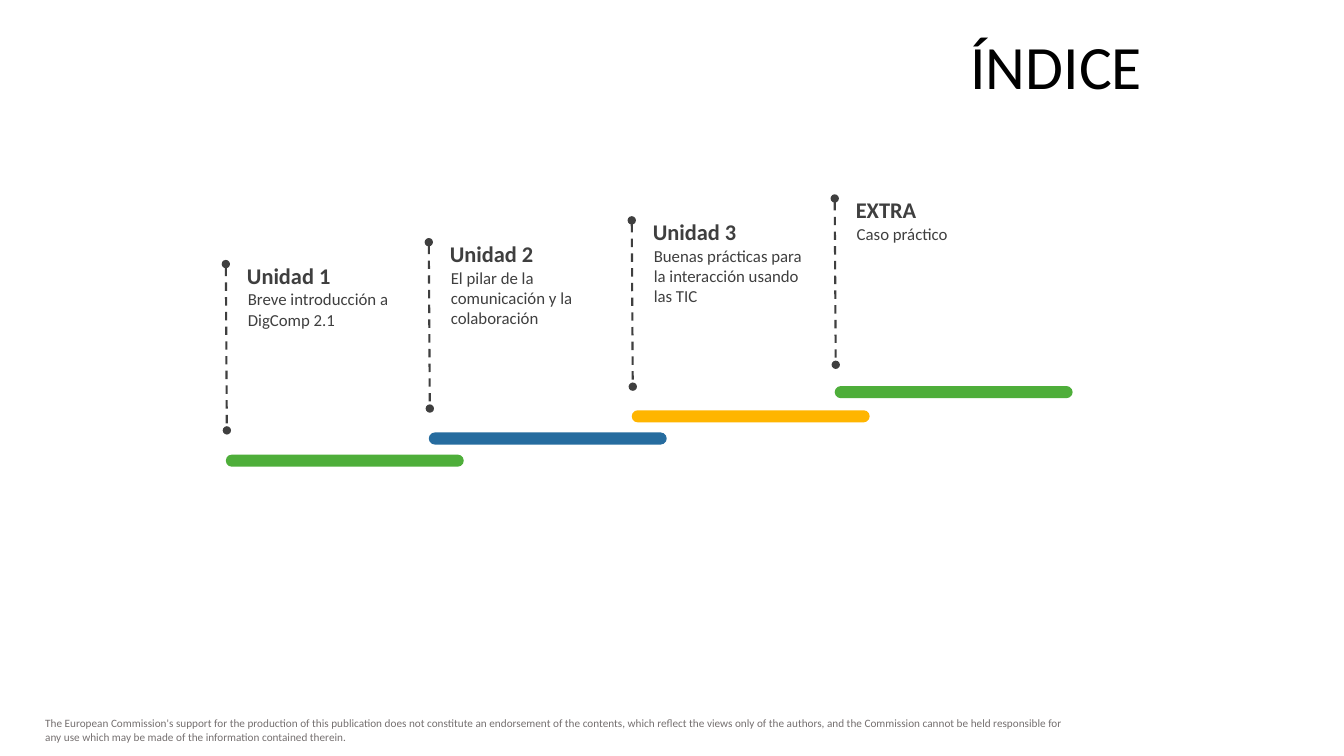
from pptx import Presentation
from pptx.dml.color import RGBColor
from pptx.enum.dml import MSO_LINE
from pptx.enum.shapes import MSO_CONNECTOR, MSO_SHAPE
from pptx.enum.text import MSO_ANCHOR, MSO_AUTO_SIZE, PP_ALIGN
from pptx.oxml.ns import qn
from pptx.util import Inches, Pt
from lxml import etree

ROUNDED = MSO_SHAPE.ROUNDED_RECTANGLE
STRAIGHT = MSO_CONNECTOR.STRAIGHT
DASH = MSO_LINE.DASH
MIDDLE = MSO_ANCHOR.MIDDLE
FIT_SHAPE = MSO_AUTO_SIZE.SHAPE_TO_FIT_TEXT
NO_FIT = MSO_AUTO_SIZE.NONE
RIGHT = PP_ALIGN.RIGHT

GREEN, BLUE, YELLOW = "4EAE3A", "266C9F", "FFB500"
DARK, GRAY, BLACK = "3F3F3F", "757070", "000000"

FIRST_LEFT, FIRST_TOP = 2.24, 2.62
STEP_RIGHT, STEP_UP = 2.013, 0.217

# heading, description, description height, bar top, bar colour
UNITS = [
    ("Unidad 1", "Breve introducción a DigComp 2.1", 0.5, 4.51, GREEN),
    ("Unidad 2", "El pilar de la comunicación y la colaboración", 0.71, 4.29, BLUE),
    ("Unidad 3", "Buenas prácticas para la interacción usando las TIC", 0.71, 4.07, YELLOW),
    ("EXTRA", "Caso práctico", 0.3, 3.83, GREEN),
]


def set_font(para, size, color, bold=False):
    para.font.name = "Calibri"
    para.font.size = Pt(size)
    para.font.bold = bold
    para.font.color.rgb = RGBColor.from_string(color)


def add_text(page, text, left, top, width, height, size, color, bold=False, inset=0.1):
    box = page.shapes.add_textbox(Inches(left), Inches(top), Inches(width), Inches(height))
    frame = box.text_frame
    frame.word_wrap = True
    frame.auto_size = FIT_SHAPE
    frame.margin_left = frame.margin_right = Inches(inset)
    frame.text = text
    set_font(frame.paragraphs[0], size, color, bold)


deck = Presentation()
deck.slide_width, deck.slide_height = Inches(13.33), Inches(7.5)
page = deck.slides.add_slide(deck.slide_layouts[5])

title = page.shapes.title
title.left, title.top = Inches(2.82), Inches(0.29)
title.width, title.height = Inches(8.61), Inches(0.79)
title.text_frame.text = "ÍNDICE"
title.text_frame.vertical_anchor = MIDDLE
title.text_frame.auto_size = NO_FIT
heading_para = title.text_frame.paragraphs[0]
heading_para.alignment = RIGHT
heading_para.line_spacing = 0.9
set_font(heading_para, 44, BLACK)

add_text(
    page,
    "The European Commission's support for the production of this publication does not "
    "constitute an endorsement of the contents, which reflect the views only of the authors, "
    "and the Commission cannot be held responsible for any use which may be made of the "
    "information contained therein.",
    0.35, 7.06, 10.46, 0.37, 8, GRAY,
)

for index, (heading, description, height, bar_top, color) in enumerate(UNITS):
    left = FIRST_LEFT + index * STEP_RIGHT
    top = FIRST_TOP - index * STEP_UP

    bar = page.shapes.add_shape(
        ROUNDED, Inches(left), Inches(bar_top), Inches(2.36), Inches(0.12))
    bar.adjustments[0] = 0.5
    bar.shadow.inherit = False
    bar.fill.solid()
    bar.fill.fore_color.rgb = RGBColor.from_string(color)
    bar.line.fill.background()

    add_text(page, description, left + 0.12, top + 0.2, 1.72, height, 12, DARK)
    add_text(page, heading, left + 0.09, top - 0.07, 1.73, 0.37, 16, DARK, True, 0.12)

    marker = page.shapes.add_connector(
        STRAIGHT, Inches(left), Inches(top), Inches(left + 0.01), Inches(top + 1.65))
    marker.line.color.rgb = RGBColor.from_string(DARK)
    marker.line.width = Pt(1.5)
    marker.line.dash_style = DASH
    outline = marker.line._get_or_add_ln()
    for end in ("a:headEnd", "a:tailEnd"):
        etree.SubElement(outline, qn(end), type="oval")
    etree.SubElement(marker._element.spPr, qn("a:effectLst"))

deck.save("out.pptx")
